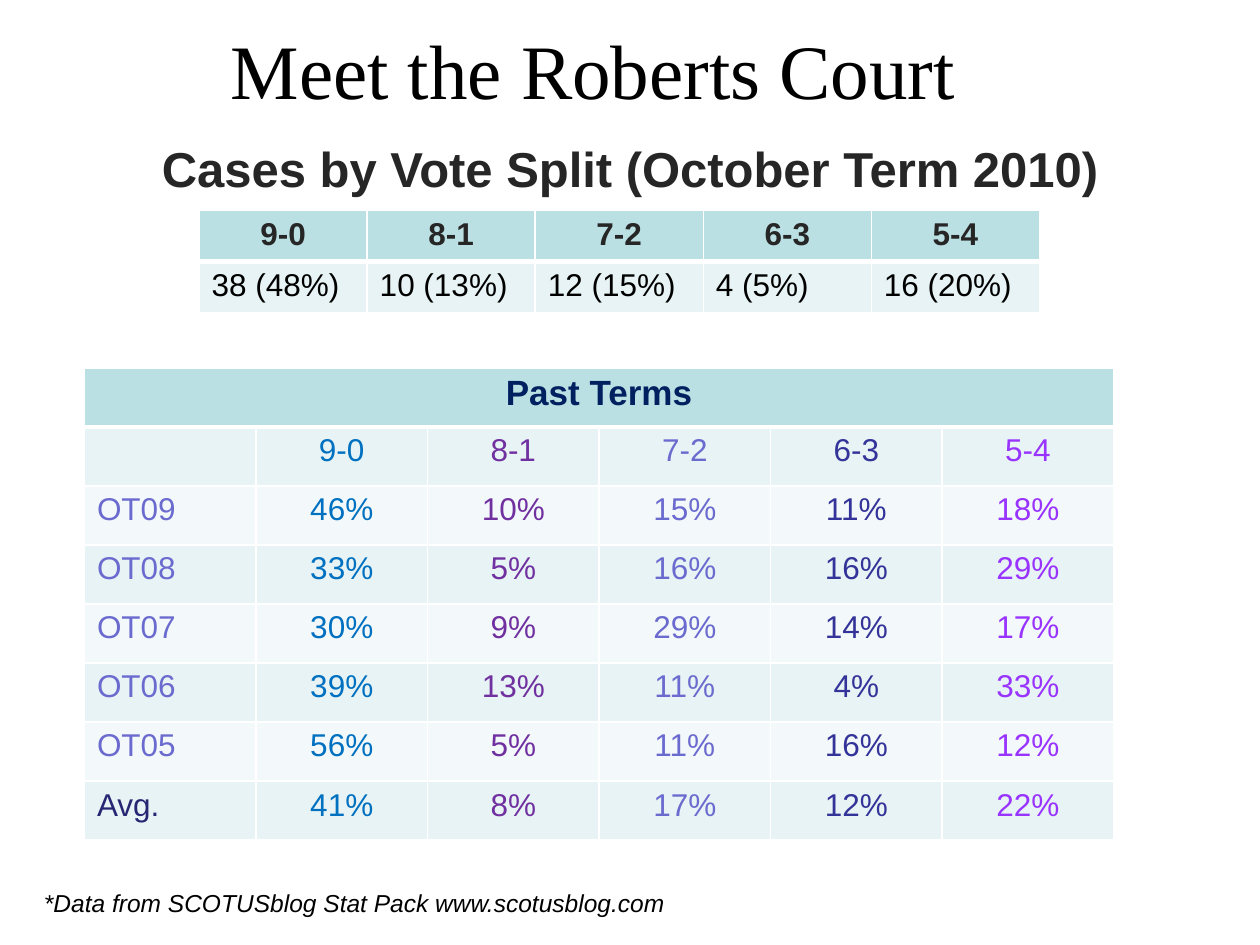
from lxml import etree
from pptx import Presentation
from pptx.dml.color import RGBColor
from pptx.enum.text import MSO_ANCHOR, PP_ALIGN
from pptx.oxml.ns import qn
from pptx.util import Inches, Pt

LEFT, CENTER = PP_ALIGN.LEFT, PP_ALIGN.CENTER
MIDDLE, TOP = MSO_ANCHOR.MIDDLE, MSO_ANCHOR.TOP
TITLE_ONLY = 5

COLORS = {
    "black": "000000", "dark": "262626", "white": "FFFFFF", "navy": "002060",
    "head": "BBE0E3", "band": "E7F3F4", "light": "F3F9FA",
    "term": "6B6BCF", "average": "262673",
    "9-0": "0070C0", "8-1": "7030A0", "7-2": "6B6BCF",
    "6-3": "333399", "5-4": "9933FF",
}
SPLITS = ["9-0", "8-1", "7-2", "6-3", "5-4"]
CURRENT = ["38 (48%)", "10 (13%)", "12 (15%)", "4 (5%)", "16 (20%)"]
PAST = [
    ("OT09", 46, 10, 15, 11, 18),
    ("OT08", 33, 5, 16, 16, 29),
    ("OT07", 30, 9, 29, 14, 17),
    ("OT06", 39, 13, 11, 4, 33),
    ("OT05", 56, 5, 11, 16, 12),
    ("Avg.", 41, 8, 17, 12, 22),
]


def rgb(name):
    return RGBColor.from_string(COLORS[name])


def write(tf, text, color, align=LEFT, **font):
    """Write one formatted paragraph into a text frame."""
    p = tf.paragraphs[0]
    p.alignment = align
    r = p.add_run()
    r.text = text
    r.font.color.rgb = rgb(color)
    for key, value in {"name": "Arial", "size": Pt(18), **font}.items():
        setattr(r.font, key, value)


def set_borders(cell, **widths):
    """Draw white cell borders; they must precede the fill in the XML."""
    tc_pr = cell._tc.get_or_add_tcPr()
    for i, side in enumerate(("lnL", "lnR", "lnT", "lnB")):
        ln = etree.Element(qn(f"a:{side}"), w=str(Pt(widths.get(side, 1))))
        fill = etree.SubElement(ln, qn("a:solidFill"))
        etree.SubElement(fill, qn("a:srgbClr"), val=COLORS["white"])
        tc_pr.insert(i, ln)


def add_grid(slide, box, rows, cols):
    """Add an even table with a header row, banded rows and white rules."""
    left, top, width, height = box
    table = slide.shapes.add_table(rows, cols, *map(Inches, box)).table
    for column in table.columns:
        column.width = Inches(width / cols)
    for i, row in enumerate(table.rows):
        row.height = Inches(height / rows)
        fill = "head" if i == 0 else "band" if i % 2 else "light"
        for cell in row.cells:
            cell.vertical_anchor = TOP
            cell.fill.solid()
            cell.fill.fore_color.rgb = rgb(fill)
            set_borders(cell, lnT=3 if i == 1 else 1, lnB=3 if i == 0 else 1)
    return table


def add_title(slide, box):
    title = slide.shapes.title
    title.left, title.top, title.width, title.height = map(Inches, box)
    title.text_frame.vertical_anchor = MIDDLE
    write(title.text_frame, "Meet the Roberts Court", "black", CENTER,
          name="Times New Roman", size=Pt(44))


def add_text(slide, box, text, color, align=LEFT, margin_top=0.05, **font):
    tf = slide.shapes.add_textbox(*map(Inches, box)).text_frame
    tf.word_wrap = True
    tf.margin_top = Inches(margin_top)
    write(tf, text, color, align, **font)


def add_current_term(slide, box):
    table = add_grid(slide, box, 2, len(SPLITS))
    for col, (split, count) in enumerate(zip(SPLITS, CURRENT)):
        write(table.cell(0, col).text_frame, split, "dark", CENTER, bold=True)
        write(table.cell(1, col).text_frame, count, "black", bold=False)


def add_past_terms(slide, box):
    cols = len(SPLITS) + 1
    table = add_grid(slide, box, len(PAST) + 2, cols)
    header = table.cell(0, 0)
    header.merge(table.cell(0, cols - 1))
    write(header.text_frame, "Past Terms", "navy", CENTER,
          size=Pt(20), bold=True)
    for col, split in enumerate(SPLITS, 1):
        write(table.cell(1, col).text_frame, split, split, CENTER, bold=False)
    for row, (term, *shares) in enumerate(PAST, 2):
        color = "average" if term == "Avg." else "term"
        write(table.cell(row, 0).text_frame, term, color, bold=False)
        for col, (split, share) in enumerate(zip(SPLITS, shares), 1):
            write(table.cell(row, col).text_frame, f"{share}%", split, CENTER,
                  bold=False)


def main():
    prs = Presentation()
    prs.slide_width, prs.slide_height = Inches(10), Inches(7.5)
    slide = prs.slides.add_slide(prs.slide_layouts[TITLE_ONLY])

    # Headings
    add_title(slide, (0.75, 0.17, 7.92, 0.75))
    add_text(slide, (0.5, 1, 9, 5.7), "Cases by Vote Split (October Term 2010)",
             "dark", CENTER, margin_top=0.1, size=Pt(28), bold=True)

    # Vote tables
    add_past_terms(slide, (0.67, 2.92, 8.17, 3.75))
    add_current_term(slide, (1.58, 1.67, 6.67, 0.81))

    # Data credit
    add_text(slide, (0.25, 7, 6.92, 0.34),
             "*Data from SCOTUSblog Stat Pack www.scotusblog.com", "black",
             size=Pt(14), italic=True)

    prs.save("out.pptx")


if __name__ == "__main__":
    main()
